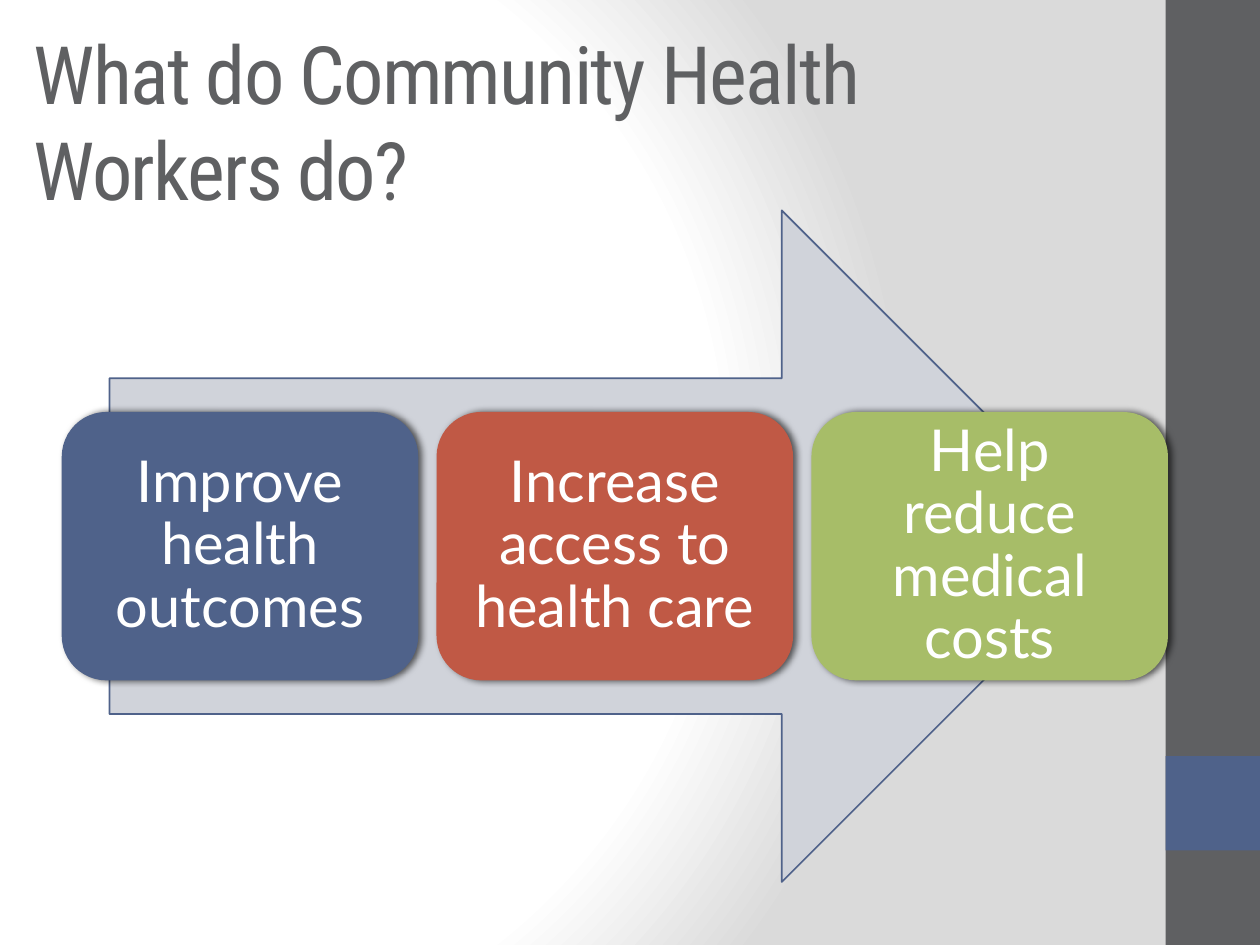
import pptx
import pptx.dml.color
import pptx.enum.shapes
import pptx.enum.text
import pptx.oxml
import pptx.oxml.ns
import pptx.util
from pptx.util import Inches

SHAPES = pptx.enum.shapes.MSO_SHAPE
MIDDLE = pptx.enum.text.MSO_ANCHOR.MIDDLE
NAMESPACES = pptx.oxml.ns.nsdecls("a", "p")

GREY, BLUE, RED, GREEN = "5F6062", "4F628A", "C05945", "A7BD68"
CARDS = [
    ("Improve health outcomes", BLUE),
    ("Increase access to health care", RED),
    ("Help reduce medical costs", GREEN),
]


def color(value):
    return pptx.dml.color.RGBColor.from_string(value)


def add_box(page, kind, left, top, width, height, fill):
    box = page.shapes.add_shape(
        kind, Inches(left), Inches(top), Inches(width), Inches(height))
    box.shadow.inherit = False
    box.fill.solid()
    box.fill.fore_color.rgb = color(fill)
    box.line.fill.background()
    return box


def set_text(frame, text, font, size, fill):
    frame.word_wrap = True
    frame.vertical_anchor = MIDDLE
    frame.text = text
    para = frame.paragraphs[0]
    span = para.runs[0]
    span.font.name = font
    span.font.size = pptx.util.Pt(size)
    span.font.color.rgb = color(fill)
    return para


def add_background(page):
    # Radial gradient, white in the middle and grey at the rim
    background = pptx.oxml.parse_xml(f"""
        <p:bg {NAMESPACES}><p:bgPr>
          <a:gradFill rotWithShape="1">
            <a:gsLst>
              <a:gs pos="0"><a:srgbClr val="FFFFFF"/></a:gs>
              <a:gs pos="75000"><a:srgbClr val="FFFFFF"/></a:gs>
              <a:gs pos="100000"><a:srgbClr val="DADADA"/></a:gs>
            </a:gsLst>
            <a:path path="circle">
              <a:fillToRect l="20000" t="50000" r="100000" b="50000"/>
            </a:path>
          </a:gradFill>
          <a:effectLst/>
        </p:bgPr></p:bg>""")
    page.element.cSld.insert(0, background)


def add_side_band(page, left, top, width, height):
    add_box(page, SHAPES.RECTANGLE, left, top, width, height, GREY)
    # Square accent, one side above the bottom edge
    add_box(page, SHAPES.RECTANGLE, left, top + height - 2 * width, width, width, BLUE)


def add_title(page, left, top, width, height):
    box = page.shapes.add_textbox(
        Inches(left), Inches(top), Inches(width), Inches(height))
    para = set_text(box.text_frame, "What do Community Health Workers do?",
                    "Roboto Condensed", 46, GREY)
    # Letter spacing of -1 pt
    para.runs[0].font._element.set("spc", "-100")


def add_shadow(box):
    effects = box._element.spPr.find(pptx.oxml.ns.qn("a:effectLst"))
    effects.append(pptx.oxml.parse_xml(f"""
        <a:outerShdw {NAMESPACES} blurRad="{pptx.util.Pt(4)}" dist="{pptx.util.Pt(2)}"
                     dir="0" rotWithShape="0">
          <a:srgbClr val="000000"><a:alpha val="60000"/></a:srgbClr>
        </a:outerShdw>"""))


def add_arrow(page, left, top, width, height):
    arrow = add_box(page, SHAPES.RIGHT_ARROW, left, top, width, height, "D0D3DA")
    arrow.line.color.rgb = color(BLUE)
    arrow.line.width = pptx.util.Pt(1)


def add_cards(page, left, top, width, height):
    card_width = 2.83
    pitch = (width - card_width) / (len(CARDS) - 1)
    for index, (text, fill) in enumerate(CARDS):
        card = add_box(page, SHAPES.ROUNDED_RECTANGLE, left + index * pitch, top,
                       card_width, height, fill)
        add_shadow(card)
        frame = card.text_frame
        frame.margin_left = frame.margin_right = Inches(0.14)
        frame.margin_top = frame.margin_bottom = Inches(0.14)
        para = set_text(frame, text, "Lato", 33, "FFFFFF")
        para.alignment = pptx.enum.text.PP_ALIGN.CENTER
        para.line_spacing = 0.9


def main():
    deck = pptx.Presentation()
    deck.slide_width, deck.slide_height = Inches(10), Inches(7.5)
    page = deck.slides.add_slide(deck.slide_layouts[6])
    add_background(page)
    add_side_band(page, 9.25, 0, 0.75, 7.5)
    add_title(page, 0.17, 0.33, 8.58, 1.25)
    add_arrow(page, 0.87, 1.67, 8, 5.33)
    add_cards(page, 0.49, 3.27, 8.78, 2.13)
    deck.save("out.pptx")


if __name__ == "__main__":
    main()
